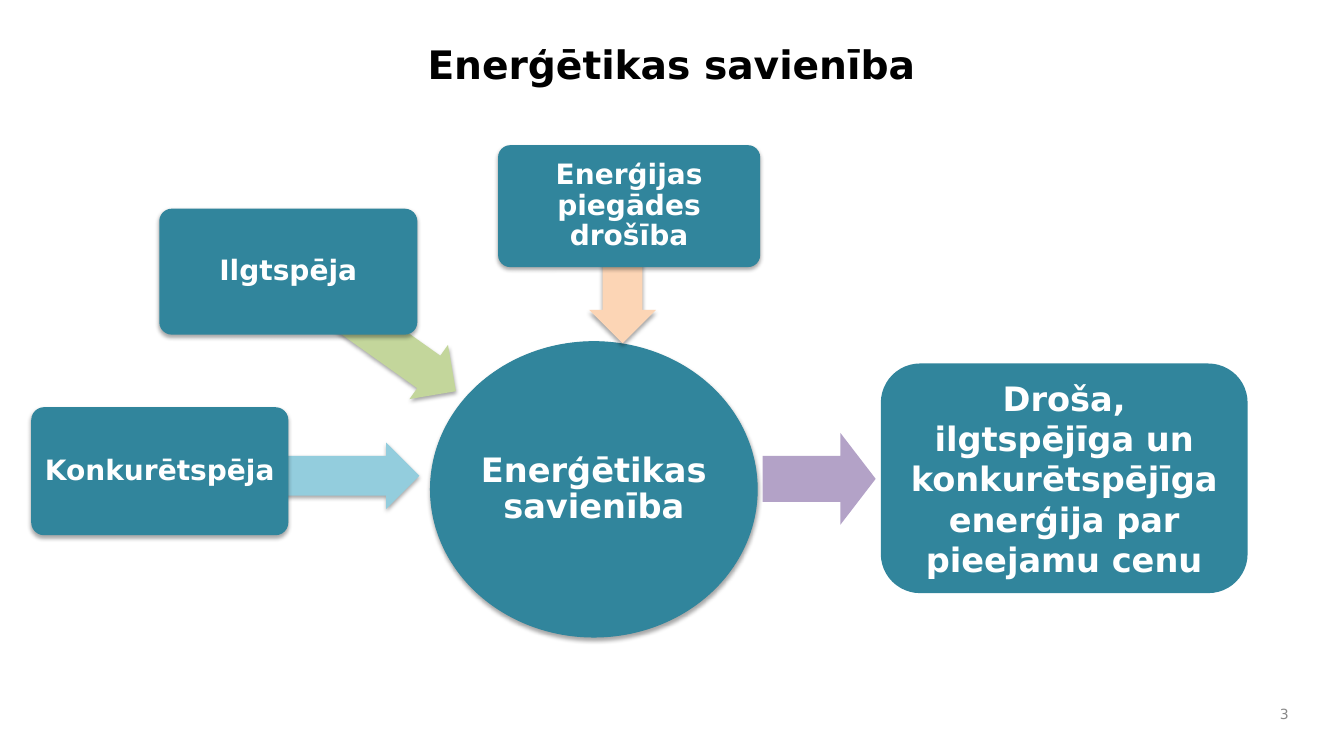
from dataclasses import dataclass

from lxml import etree
from pptx import Presentation
from pptx.dml.color import RGBColor
from pptx.enum.shapes import MSO_SHAPE
from pptx.enum.text import MSO_ANCHOR, PP_ALIGN
from pptx.oxml.ns import qn
from pptx.util import Inches, Pt

OVAL, ROUND = MSO_SHAPE.OVAL, MSO_SHAPE.ROUNDED_RECTANGLE
LEFT, DOWN = MSO_SHAPE.LEFT_ARROW, MSO_SHAPE.DOWN_ARROW
TOP, MIDDLE = MSO_ANCHOR.TOP, MSO_ANCHOR.MIDDLE
START, CENTER, END = PP_ALIGN.LEFT, PP_ALIGN.CENTER, PP_ALIGN.RIGHT
COLORS = {
    "teal": "31859C", "blue": "93CDDD", "green": "C3D69B", "peach": "FCD5B5",
    "purple": "B3A2C7", "white": "FFFFFF", "black": "000000", "gray": "898989",
}
SHADOW = {"blurRad": Pt(3.1), "dist": Pt(1.8), "dir": 90 * 60000, "rotWithShape": 0}


@dataclass
class Item:
    """A shape of the diagram, with its label if it has one."""
    kind: MSO_SHAPE
    box: tuple[float, float, float, float]
    fill: str = "teal"
    adjust: tuple[float, ...] = ()
    turn: float = 0
    text: str = ""
    size: int = 20
    inset: float = 0.08
    space: float = 0.9
    line: float = 0
    shade: bool = True


ARROW = (0.6, 0.5)
ITEMS = [
    Item(OVAL, (4.27, 3.39, 3.24, 2.93), text="Enerģētikas savienība",
         size=24, inset=0.02, line=0.75),
    Item(LEFT, (1.61, 4.39, 2.55, 0.66), "blue", ARROW, 180),
    Item(ROUND, (0.31, 4.04, 2.55, 1.27), adjust=(0.1,), text="Konkurētspēja", inset=0.04),
    Item(LEFT, (2.67, 2.96, 2.04, 0.66), "green", ARROW, 215.4),
    Item(ROUND, (1.58, 2.07, 2.56, 1.25), adjust=(0.1,), text="Ilgtspēja"),
    Item(LEFT, (5.53, 2.43, 1.29, 0.66), "peach", ARROW, 270),
    Item(ROUND, (4.94, 1.44, 2.6, 1.21), adjust=(0.1,), text="Enerģijas piegādes drošība"),
    Item(DOWN, (7.67, 4.19, 0.91, 1.12), "purple", (0.5, 0.384), 270, shade=False),
    Item(ROUND, (8.75, 3.62, 3.61, 2.25), size=24, inset=0.1, space=1, line=2, shade=False,
         text="Droša, ilgtspējīga un konkurētspējīga enerģija par pieejamu cenu"),
]


def color(name: str) -> RGBColor:
    """Return the named colour."""
    return RGBColor.from_string(COLORS[name])


def write(shape, text: str, size: int, ink: str, align: PP_ALIGN, anchor: MSO_ANCHOR,
          bold: bool = True, inset: tuple[float, float] = (0.1, 0.05), space: float = 1) -> None:
    """Put one formatted paragraph into a shape."""
    frame = shape.text_frame
    frame.text = text
    across, down = map(Inches, inset)
    para = frame.paragraphs[0]
    formats = {
        frame: {"word_wrap": True, "vertical_anchor": anchor, "margin_left": across,
                "margin_right": across, "margin_top": down, "margin_bottom": down},
        para: {"alignment": align, "line_spacing": space},
        para.runs[0].font: {"name": "DejaVu Sans", "size": Pt(size), "bold": bold},
    }
    for target, values in formats.items():
        for key, value in values.items():
            setattr(target, key, value)
    para.runs[0].font.color.rgb = color(ink)


def shade(shape) -> None:
    """Give a shape a soft shadow below it."""
    effects = shape.element.spPr.find(qn("a:effectLst"))
    outer = etree.SubElement(effects, qn("a:outerShdw"),
                             {key: str(value) for key, value in SHADOW.items()})
    tone = etree.SubElement(outer, qn("a:srgbClr"), val=COLORS["black"])
    etree.SubElement(tone, qn("a:alpha"), val="35000")


def draw(slide, item: Item) -> None:
    """Draw one shape of the diagram."""
    shape = slide.shapes.add_shape(item.kind, *map(Inches, item.box))
    shape.rotation = item.turn
    for index, value in enumerate(item.adjust):
        shape.adjustments[index] = value
    shape.fill.solid()
    shape.fill.fore_color.rgb = color(item.fill)
    if item.line:
        shape.line.color.rgb = color(item.fill)
        shape.line.width = Pt(item.line)
    else:
        shape.line.fill.background()
    shape.shadow.inherit = False
    if item.shade:
        shade(shape)
    if item.text:
        write(shape, item.text, item.size, "white", CENTER, MIDDLE,
              inset=(item.inset, min(item.inset, 0.05)), space=item.space)


def main() -> None:
    """Build and save the slide."""
    deck = Presentation()
    deck.slide_width, deck.slide_height = Inches(13.33), Inches(7.5)
    slide = deck.slides.add_slide(deck.slide_layouts[5])
    title = slide.shapes.title
    place = zip(("left", "top", "width", "height"), (4.14, 0.35, 8.89, 1.13))
    for key, value in place:
        setattr(title, key, Inches(value))
    write(title, "Enerģētikas savienība", 28, "black", START, TOP)
    number = slide.shapes.add_textbox(*map(Inches, (12.44, 6.92, 0.44, 0.33)))
    write(number, "3", 10, "gray", END, MIDDLE, bold=False)
    for item in ITEMS:
        draw(slide, item)
    deck.save("out.pptx")


if __name__ == "__main__":
    main()
